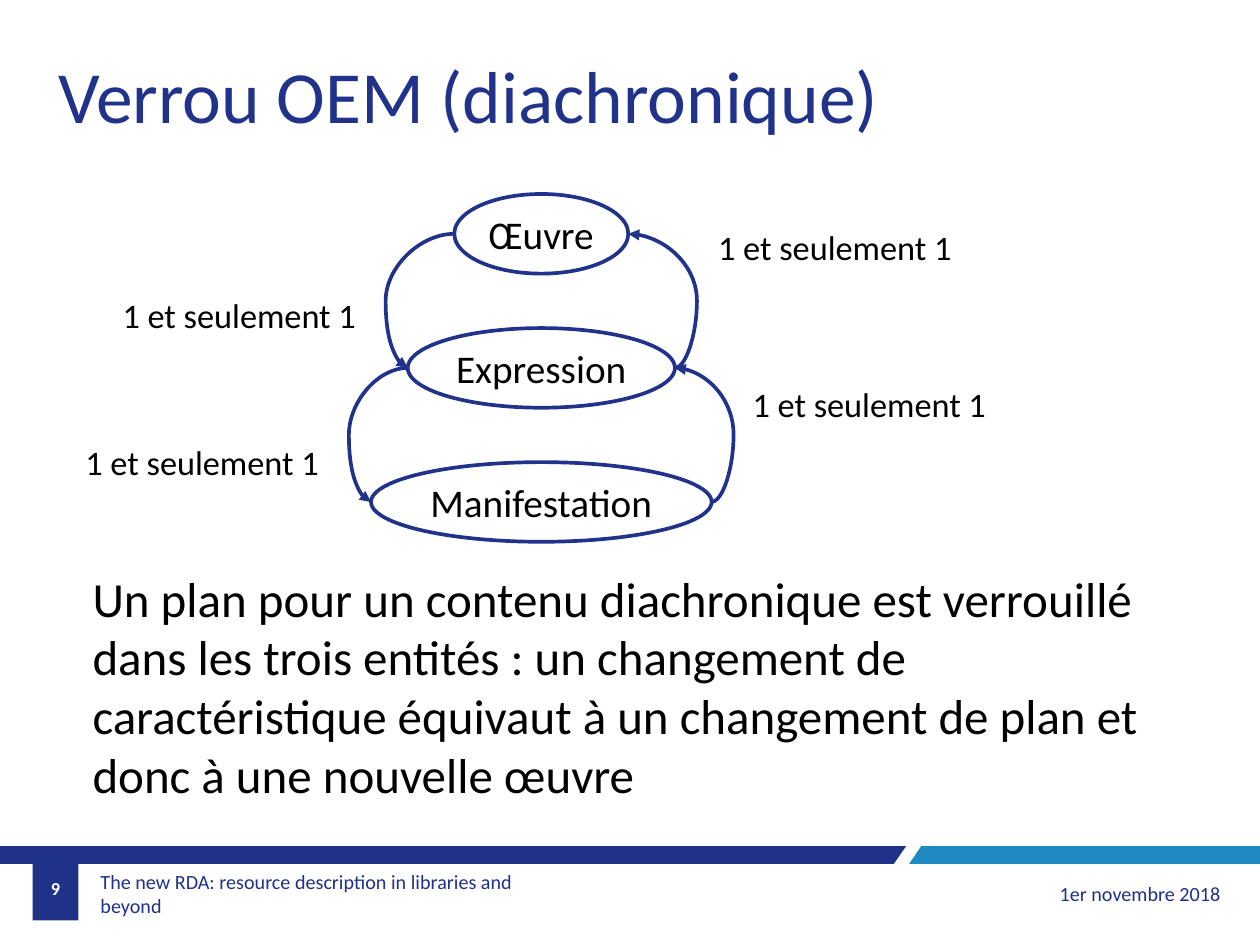
"""Build the slide on the diachronic work-expression-manifestation lock."""
from lxml import etree
from pptx import Presentation
from pptx.dml.color import RGBColor
from pptx.enum.shapes import MSO_CONNECTOR, MSO_SHAPE
from pptx.enum.text import MSO_ANCHOR, PP_ALIGN
from pptx.oxml.ns import qn
from pptx.util import Pt

LEFT, CENTER, RIGHT = PP_ALIGN.LEFT, PP_ALIGN.CENTER, PP_ALIGN.RIGHT
TOP, MIDDLE = MSO_ANCHOR.TOP, MSO_ANCHOR.MIDDLE
OVAL, RECT, CURVE = MSO_SHAPE.OVAL, MSO_SHAPE.RECTANGLE, MSO_CONNECTOR.CURVE
COLORS = {"navy": "203189", "line": "21328A", "blue": "1D8BC1",
          "white": "FFFFFF", "black": "000000"}
W, H = 1028.16, 771.12


def rgb(name):
    return RGBColor.from_string(COLORS[name])


def write(sp, text, size, color="black", align=LEFT, anchor=TOP, bold=False, wrap=True):
    tf = sp.text_frame
    tf.word_wrap = wrap
    tf.vertical_anchor = anchor
    p = tf.paragraphs[0]
    p.alignment = align
    r = p.add_run()
    r.text = text
    r.font.name, r.font.size, r.font.bold = "Calibri", Pt(size), bold
    r.font.color.rgb = rgb(color)


prs = Presentation()
prs.slide_width, prs.slide_height = Pt(W), Pt(H)
s = prs.slides.add_slide(prs.slide_layouts[6])

band_top, band_bottom = 690.5, 704.9
bands = [
    ("navy", [(0, band_top), (739.4, band_top), (729.4, band_bottom), (0, band_bottom)]),
    ("blue", [(751.7, band_top), (W, band_top), (W, band_bottom), (741.9, band_bottom)]),
]
footer_shapes = []
for color, points in bands:
    fb = s.shapes.build_freeform(Pt(points[0][0]), Pt(points[0][1]))
    fb.add_line_segments([(Pt(x), Pt(y)) for x, y in points[1:]], close=True)
    footer_shapes.append((fb.convert_to_shape(), color))
number_block = s.shapes.add_shape(RECT, Pt(26.6), Pt(band_top), Pt(37.4), Pt(60.5))
footer_shapes.append((number_block, "navy"))
for sp, color in footer_shapes:
    sp.shadow.inherit = False
    sp.fill.solid()
    sp.fill.fore_color.rgb = rgb(color)
    sp.line.fill.background()

body = ("Un plan pour un contenu diachronique est verrouillé dans les trois entités : "
        "un changement de caractéristique équivaut à un changement de plan "
        "et donc à une nouvelle œuvre")
texts = [
    (74.9, 709.2, 394, 39.6, "The new RDA: resource description in libraries and beyond",
     dict(size=16.4, color="navy", anchor=MIDDLE)),
    (739.4, 709.2, 263.5, 39.6, "1er novembre 2018",
     dict(size=16.4, color="navy", align=RIGHT, anchor=MIDDLE)),
    (26.6, 704.9, 37.4, 39.6, "9",
     dict(size=14.9, color="white", align=CENTER, anchor=MIDDLE, bold=True)),
    (40.3, 37.4, 695.5, 80, "Verrou OEM (diachronique)",
     dict(size=60, color="line", wrap=False)),
    (68.4, 460, 869.8, 201, body, dict(size=40)),
]
for x, y in [(578.9, 181.4), (607, 308.9), (92.9, 236.9), (62.6, 356.4)]:
    texts.append((x, y, 207.4, 41, "1 et seulement 1", dict(size=28, wrap=False)))
for x, y, w, h, text, fmt in texts:
    write(s.shapes.add_textbox(Pt(x), Pt(y), Pt(w), Pt(h)), text, **fmt)

center_x, first_y, pitch, oval_h, bulge = 441.7, 190.8, 109.4, 65, 18
levels = [("Œuvre", 142), ("Expression", 218), ("Manifestation", 278)]
for i, (name, w) in enumerate(levels):
    sp = s.shapes.add_shape(OVAL, Pt(center_x - w / 2),
                            Pt(first_y + i * pitch - oval_h / 2), Pt(w), Pt(oval_h))
    sp.shadow.inherit = False
    sp.fill.solid()
    sp.fill.fore_color.rgb = rgb("white")
    sp.line.color.rgb = rgb("line")
    sp.line.width = Pt(3)
    write(sp, name, 32, align=CENTER, anchor=MIDDLE, wrap=False)

for i in range(len(levels) - 1):
    upper, lower = levels[i][1] / 2, levels[i + 1][1] / 2
    y1, y2 = first_y + i * pitch, first_y + (i + 1) * pitch
    ratio = bulge / (lower - upper)
    for x1, ya, x2, yb, adj in [
        (center_x - upper, y1, center_x - lower, y2, 1 + ratio),
        (center_x + lower, y2, center_x + upper, y1, -ratio),
    ]:
        cx = s.shapes.add_connector(CURVE, Pt(x1), Pt(ya), Pt(x2), Pt(yb))
        cx.line.color.rgb = rgb("line")
        cx.line.width = Pt(3)
        spPr = cx._element.spPr
        guides = spPr.find(qn("a:prstGeom")).get_or_add_avLst()
        etree.SubElement(guides, qn("a:gd"), name="adj1", fmla=f"val {round(adj * 100000)}")
        etree.SubElement(spPr.find(qn("a:ln")), qn("a:tailEnd"), type="triangle")
        etree.SubElement(spPr, qn("a:effectLst"))

prs.save("out.pptx")
